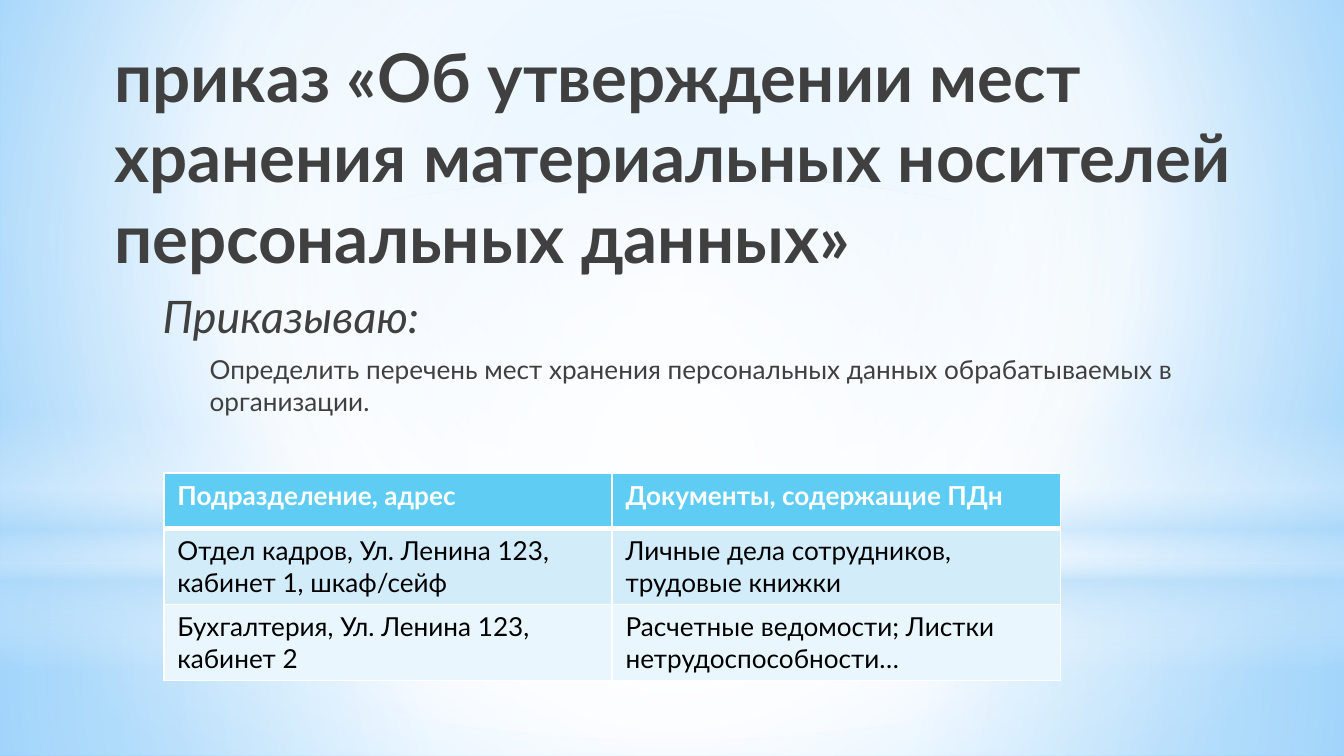
from lxml import etree
from pptx import Presentation
from pptx.dml.color import RGBColor
from pptx.enum import shapes, text
from pptx.oxml import ns
from pptx.util import Inches, Pt

HEAD = "приказ «Об утверждении мест хранения материальных носителей персональных данных»"
BODY = [
    dict(text="Приказываю:", level=0, left=0.05, size="lead", slant=True),
    dict(text="Определить перечень мест хранения персональных данных обрабатываемых в организации.",
         level=1, left=0.4, size="small", slant=False),
]
ROWS = [
    ("Подразделение, адрес", "Документы, содержащие ПДн"),
    ("Отдел кадров, Ул. Ленина 123, кабинет 1, шкаф/сейф", "Личные дела сотрудников, трудовые книжки"),
    ("Бухгалтерия, Ул. Ленина 123, кабинет 2", "Расчетные ведомости; Листки нетрудоспособности…"),
]
THEME = dict(
    font="Lato", title=36, lead=24, small=14,
    ink="404040", white="FFFFFF", black="000000", haze="B4DCFA",
    fills=["5ECCF3", "D2ECFA", "EAF6FD"],
)
W = 10
H = W * 9 / 16
WHITE, HAZE = THEME["white"], THEME["haze"]
MID = (50, 50, 50, 50)
SKY = [(0, "9ED5FF", 100), (60, WHITE, 100), (100, "5BB9FF", 100)]
SPLIT = 4.19
GLOWS = [
    ("RECTANGLE", SPLIT, H - SPLIT, [(0, WHITE, 91), (37, WHITE, 76), (100, HAZE, 79)], MID),
    ("RECTANGLE", 0, SPLIT, [(0, WHITE, 89), (48, WHITE, 62), (100, HAZE, 79)], MID),
    ("RECTANGLE", 3.09, 1.88, [(0, WHITE, 0), (29, WHITE, 30), (45, HAZE, 40),
                               (55, WHITE, 26), (65, HAZE, 60), (100, WHITE, 0)], None),
    ("OVAL", 1.31, SPLIT, [(0, WHITE, 100), (56, WHITE, 0)], MID),
]


def node(root, tag, **attrs):
    item = etree.SubElement(root, ns.qn(tag))
    for key, val in attrs.items():
        item.set(key, str(val))
    return item


def blend(fill, root, stops, focus):
    fill.solid()
    old = root.find(".//" + ns.qn("a:solidFill"))
    grad = etree.Element(ns.qn("a:gradFill"), rotWithShape="1")
    band = node(grad, "a:gsLst")
    for pos, tint, alpha in stops:
        stop = node(band, "a:gs", pos=pos * 1000)
        color = node(stop, "a:srgbClr", val=tint)
        if alpha < 100:
            node(color, "a:alpha", val=alpha * 1000)
    if focus:
        ring = node(grad, "a:path", path="circle")
        node(ring, "a:fillToRect", **{k: v * 1000 for k, v in zip("ltrb", focus)})
    else:
        node(grad, "a:lin", ang=90 * 60000, scaled=0)
    old.getparent().replace(old, grad)


def write(para, words, size, tint, bold=False, slant=False):
    run = para.add_run()
    run.text = words
    font = run.font
    font.name, font.size = THEME["font"], Pt(THEME[size])
    font.bold, font.italic = bold, slant
    font.color.rgb = RGBColor.from_string(tint)


def place(shape, left, top, wide, high):
    shape.left, shape.top, shape.width, shape.height = map(Inches, (left, top, wide, high))
    frame = shape.text_frame
    frame.word_wrap = True
    frame.auto_size = text.MSO_AUTO_SIZE.NONE
    frame.vertical_anchor = text.MSO_ANCHOR.TOP
    return frame


def edge(cell, head):
    props = cell._tc.get_or_add_tcPr()
    for spot, side in enumerate("LRTB"):
        width = 3 if head and side == "B" else 1
        line = etree.Element(ns.qn("a:ln" + side), w=str(Pt(width)))
        node(node(line, "a:solidFill"), "a:srgbClr", val=WHITE)
        props.insert(spot, line)


def main():
    deck = Presentation()
    deck.slide_width, deck.slide_height = Inches(W), Inches(H)
    slide = deck.slides.add_slide(deck.slide_layouts[1])
    title, body = slide.placeholders
    blend(slide.background.fill, slide.element, SKY, (20, 10, 20, 60))

    for kind, top, high, stops, focus in GLOWS:
        glow = slide.shapes.add_shape(getattr(shapes.MSO_SHAPE, kind), 0, Inches(top), Inches(W), Inches(high))
        glow.shadow.inherit = False
        blend(glow.fill, glow.element, stops, focus)
        glow.line.fill.background()
    for item in (title, body):
        slide.shapes._spTree.append(item.element)

    para = place(title, 0.75, 0.21, 8.74, 1.81).paragraphs[0]
    para.alignment = text.PP_ALIGN.LEFT
    write(para, HEAD, "title", THEME["ink"], bold=True)

    frame = place(body, 1.06, 2.1, 7.87, 2.83)
    for spot, part in enumerate(BODY):
        para = frame.add_paragraph() if spot else frame.paragraphs[0]
        para.level = part["level"]
        para.space_before, para.space_after = Pt(THEME[part["size"]] * 0.2), Pt(3)
        props = para._p.get_or_add_pPr()
        props.set("marL", str(Inches(part["left"])))
        props.set("indent", "0")
        node(props, "a:buNone")
        write(para, part["text"], part["size"], THEME["ink"], slant=part["slant"])

    high = 0.41
    grid = slide.shapes.add_table(len(ROWS), 2, Inches(1.22), Inches(3.52),
                                  Inches(6.67), Inches(high * len(ROWS))).table
    for r, row in enumerate(ROWS):
        for c, words in enumerate(row):
            cell = grid.cell(r, c)
            cell.fill.solid()
            cell.fill.fore_color.rgb = RGBColor.from_string(THEME["fills"][r])
            edge(cell, r == 0)
            tint = THEME["black"] if r else WHITE
            write(cell.text_frame.paragraphs[0], words, "small", tint, bold=r == 0)
    deck.save("out.pptx")


if __name__ == "__main__":
    main()
